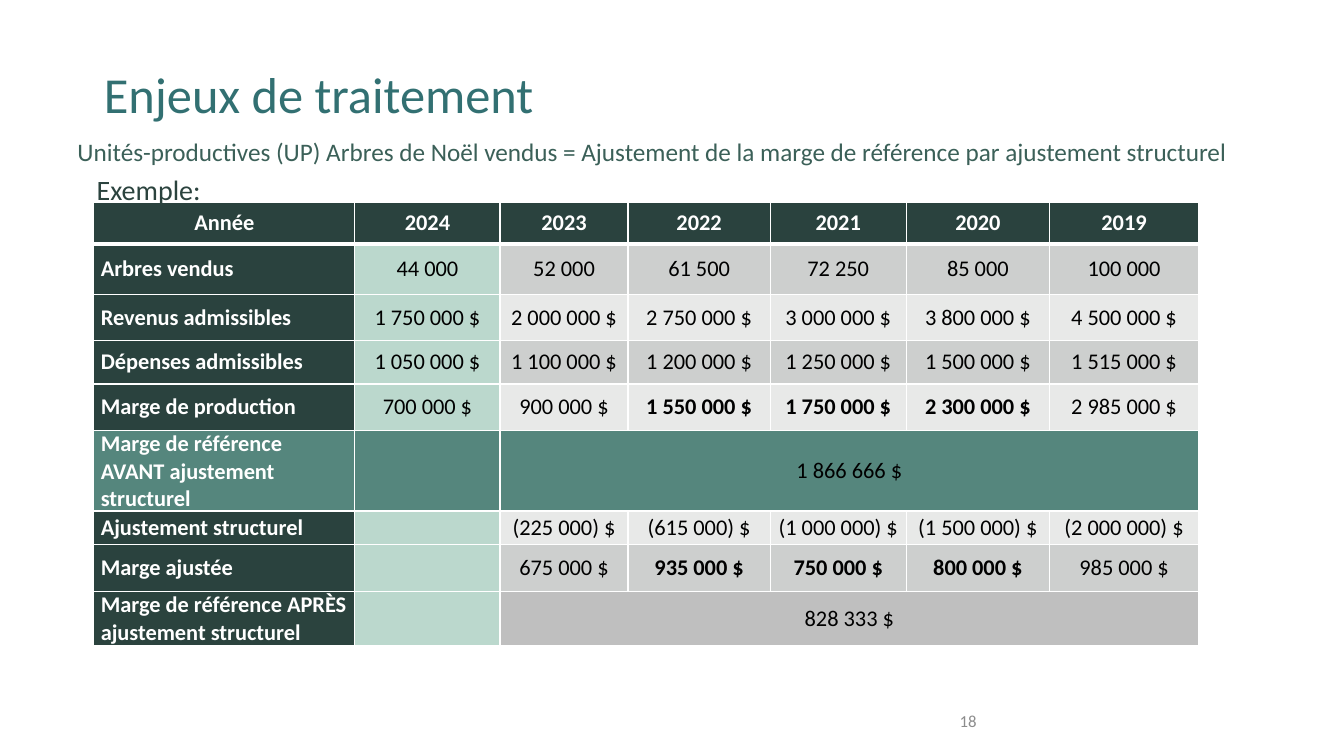
from dataclasses import dataclass

from lxml.etree import SubElement
from pptx import Presentation
from pptx.dml.color import RGBColor
from pptx.enum.text import MSO_ANCHOR as Anchor, PP_ALIGN as Align
from pptx.oxml.ns import qn
from pptx.util import Inches, Pt


@dataclass(frozen=True)
class Theme:
    font: str = "Calibri"
    title: str = "327072"
    subtitle: str = "3B6058"
    dark: str = "2A423E"
    example: str = "2B433E"
    teal: str = "55867D"
    mint: str = "BBD8CD"
    band: str = "CDCFCE"
    light: str = "E8E9E8"
    result: str = "BFBFBF"
    white: str = "FFFFFF"
    black: str = "000000"
    muted: str = "8C8C8C"
    title_size: int = 36
    example_size: int = 20
    subtitle_size: int = 18
    cell_size: int = 16
    number_size: int = 12


T = Theme()

HEADERS = ["Année", "2024", "2023", "2022", "2021", "2020", "2019"]
COLUMN_WIDTHS = [2.59, 1.44, 1.27, 1.41, 1.35, 1.42, 1.48]
HEADER_HEIGHT = 0.41
REFERENCE_COLUMNS = (3, 4, 5)


@dataclass(frozen=True)
class Row:
    height: float
    values: list
    fill: str
    label_fill: str = T.dark
    current_fill: str = T.mint
    bold_columns: tuple = ()


ROWS = [
    Row(0.5, ["Arbres vendus", "44 000", "52 000", "61 500", "72 250",
              "85 000", "100 000"], T.band),
    Row(0.46, ["Revenus admissibles", "1 750 000 $", "2 000 000 $", "2 750 000 $",
               "3 000 000 $", "3 800 000 $", "4 500 000 $"], T.light),
    Row(0.43, ["Dépenses admissibles", "1 050 000 $", "1 100 000 $", "1 200 000 $",
               "1 250 000 $", "1 500 000 $", "1 515 000 $"], T.band),
    Row(0.46, ["Marge de production", "700 000 $", "900 000 $", "1 550 000 $",
               "1 750 000 $", "2 300 000 $", "2 985 000 $"], T.light,
        bold_columns=REFERENCE_COLUMNS),
    Row(0.8, ["Marge de référence AVANT ajustement structurel", "", "1 866 666 $"],
        T.teal, T.teal, T.teal),
    Row(0.33, ["Ajustement structurel", "", "(225 000) $", "(615 000) $",
               "(1 000 000) $", "(1 500 000) $", "(2 000 000) $"], T.light),
    Row(0.47, ["Marge ajustée", "", "675 000 $", "935 000 $", "750 000 $",
               "800 000 $", "985 000 $"], T.band, bold_columns=REFERENCE_COLUMNS),
    Row(0.47, ["Marge de référence APRÈS ajustement structurel", "", "828 333 $"],
        T.result, T.example),
]


def write(tf, text, size, color, bold=False, align=Align.LEFT, spacing=None):
    p = tf.paragraphs[0]
    p.text = text
    p.alignment = align
    p.line_spacing = spacing
    for r in p.runs:
        r.font.name = T.font
        r.font.size = Pt(size)
        r.font.bold = bold
        r.font.color.rgb = RGBColor.from_string(color)


def add_title(slide, x, y, w, h):
    sp = slide.shapes.title
    sp.left, sp.top, sp.width, sp.height = (Inches(v) for v in (x, y, w, h))
    sp.text_frame.vertical_anchor = Anchor.TOP
    write(sp.text_frame, "Enjeux de traitement", T.title_size, T.title, spacing=0.9)


def add_text(slide, x, y, w, h, text, size, color, anchor=Anchor.TOP, spacing=None):
    sp = slide.shapes.add_textbox(*(Inches(v) for v in (x, y, w, h)))
    tf = sp.text_frame
    tf.word_wrap = True
    tf.vertical_anchor = anchor
    write(tf, text, size, color, spacing=spacing)


def set_borders(cell, bottom):
    tcPr = cell._tc.get_or_add_tcPr()
    for side, width in (("L", 1), ("R", 1), ("T", 1), ("B", bottom)):
        ln = SubElement(tcPr, qn(f"a:ln{side}"), w=str(Pt(width)))
        fill = SubElement(ln, qn("a:solidFill"))
        SubElement(fill, qn("a:srgbClr"), val=T.white)


def format_cell(cell, text, fill, color, bold, align, bottom=1):
    set_borders(cell, bottom)
    cell.fill.solid()
    cell.fill.fore_color.rgb = RGBColor.from_string(fill)
    cell.vertical_anchor = Anchor.MIDDLE
    cell.margin_left = cell.margin_right = Inches(0.07)
    cell.margin_top = cell.margin_bottom = 0
    write(cell.text_frame, text, T.cell_size, color, bold, align)


def add_margin_table(slide, x, y):
    heights = [HEADER_HEIGHT] + [row.height for row in ROWS]
    size = (sum(COLUMN_WIDTHS), sum(heights))
    table = slide.shapes.add_table(len(heights), len(HEADERS),
                                   *(Inches(v) for v in (x, y, *size))).table
    for column, width in zip(table.columns, COLUMN_WIDTHS):
        column.width = Inches(width)
    for line, height in zip(table.rows, heights):
        line.height = Inches(height)
    for c, text in enumerate(HEADERS):
        format_cell(table.cell(0, c), text, T.dark, T.white, True, Align.CENTER, 3)
    last = len(HEADERS) - 1
    for i, row in enumerate(ROWS, 1):
        fills = [row.label_fill, row.current_fill] + [row.fill] * (last - 1)
        values = row.values + [""] * (len(HEADERS) - len(row.values))
        for c, (text, fill) in enumerate(zip(values, fills)):
            label = c == 0
            format_cell(table.cell(i, c), text, fill,
                        T.white if label else T.black,
                        label or c in row.bold_columns,
                        Align.LEFT if label else Align.CENTER,
                        )
        if len(row.values) < len(HEADERS):
            table.cell(i, len(row.values) - 1).merge(table.cell(i, last))


def add_margin_slide(prs):
    slide = prs.slides.add_slide(prs.slide_layouts[5])
    add_title(slide, 0.93, 0.64, 11.5, 0.81)
    add_text(slide, 0.67, 1.34, 12.23, 0.55,
             "Unités-productives (UP) Arbres de Noël vendus = "
             "Ajustement de la marge de référence par ajustement structurel",
             T.subtitle_size, T.subtitle, spacing=0.9)
    add_text(slide, 9.42, 6.95, 3, 0.4, "18", T.number_size, T.muted, Anchor.MIDDLE)
    add_margin_table(slide, 0.93, 2.01)
    add_text(slide, 0.86, 1.66, 1.62, 0.77, "Exemple:", T.example_size, T.example)


def main():
    prs = Presentation()
    prs.slide_width, prs.slide_height = Inches(13.33), Inches(7.5)
    add_margin_slide(prs)
    prs.save("out.pptx")


if __name__ == "__main__":
    main()
